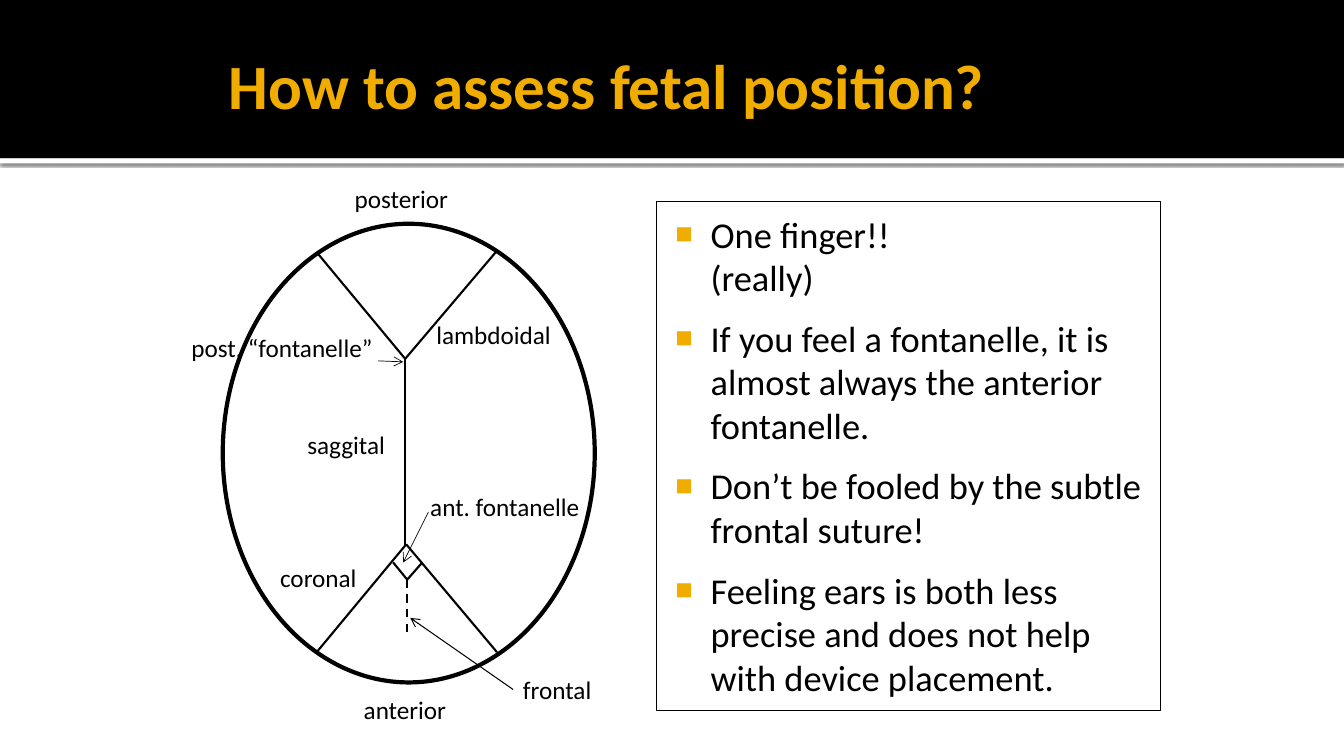
"""Build a slide on judging fetal position, with a skull diagram and advice."""
from dataclasses import dataclass

from lxml.etree import SubElement
from pptx import Presentation
from pptx.dml.color import RGBColor
from pptx.enum.dml import MSO_LINE
from pptx.enum.shapes import MSO_CONNECTOR, MSO_SHAPE
from pptx.enum.text import MSO_ANCHOR, MSO_AUTO_SIZE, PP_ALIGN
from pptx.oxml.ns import qn
from pptx.shapes.autoshape import Shape
from pptx.shapes.connector import Connector
from pptx.slide import Slide
from pptx.text.text import TextFrame, _Paragraph
from pptx.util import Emu, Inches, Pt

BLACK = RGBColor(0x00, 0x00, 0x00)
WHITE = RGBColor(0xFF, 0xFF, 0xFF)
GOLD = RGBColor(0xF0, 0xAD, 0x00)
FONT = "Calibri"
DASH = MSO_LINE.DASH
STRAIGHT = MSO_CONNECTOR.STRAIGHT
RECT, OVAL = MSO_SHAPE.RECTANGLE, MSO_SHAPE.OVAL
LEFT, TOP, MIDDLE = PP_ALIGN.LEFT, MSO_ANCHOR.TOP, MSO_ANCHOR.MIDDLE
FIXED, GROW = MSO_AUTO_SIZE.NONE, MSO_AUTO_SIZE.SHAPE_TO_FIT_TEXT
CELL = Inches(0.1)
COLS, ROWS = 133.33, 75
LEFT_SIDE = 1


@dataclass(frozen=True)
class Box:
    col: float
    row: float
    wide: float
    high: float


@dataclass(frozen=True)
class Label:
    text: str
    col: float
    row: float
    wide: float


@dataclass(frozen=True)
class Stroke:
    start: tuple[float, float]
    end: tuple[float, float]
    width: float = 1.5
    dashed: bool = False
    arrow: bool = False
    source: str = ""


HEADER = Box(0, 0, COLS, 15.7)
STRIP = Box(0, 15.7, COLS, 0.5)
TITLE = Box(21.7, 0, 81.7, 16.7)
ADVICE = Box(65.1, 20, 50, 50.5)
SKULL = Box(22.1, 22.2, 36.9, 45.5)
LABEL_HIGH = 4

POINTS = (
    ("One finger!! ", "(really)"),
    ("If you feel a fontanelle, it is almost always the anterior fontanelle.",),
    ("Don’t be fooled by the subtle frontal suture!",),
    ("Feeling ears is both less precise and does not help with device placement.",),
)
LABELS = (
    Label("lambdoidal", 42.3, 31.2, 13.7),
    Label("saggital", 29.5, 42.1, 10.2),
    Label("posterior", 34.2, 17.7, 11.8),
    Label("anterior", 35.1, 68.4, 10.6),
    Label("coronal", 26.8, 55.3, 9.8),
    Label("frontal", 50.9, 66.4, 9),
    Label("post. “fontanelle”", 18, 32.5, 20.3),
    Label("ant. fontanelle", 41.7, 48.3, 17.3),
)
POST, ANT, TIP = (40.2, 35.6), (40.3, 54), (40.4, 57.5)
STROKES = (
    Stroke((31.4, 25), POST),
    Stroke((49.2, 25), POST),
    Stroke((31.5, 64.6), ANT),
    Stroke((49.3, 64.7), ANT),
    Stroke(POST, (40.2, 54.1)),
    Stroke((39, 55.8), TIP),
    Stroke((41.9, 55.8), TIP),
    Stroke(TIP, (40.4, 63.3), dashed=True),
    Stroke((50.9, 68.4), (40.7, 61.3), 0.75, arrow=True, source="frontal"),
    Stroke((37.5, 35.8), (40, 35.9), 0.5, arrow=True),
    Stroke((42.5, 50.8), (40, 55.8), 0.5, arrow=True),
)


def span(cells: float) -> Emu:
    """Turn a count of grid cells into a length."""
    return Emu(round(cells * CELL))


def place(shape: Shape, box: Box) -> None:
    """Move a shape to its box on the grid."""
    shape.left, shape.top = span(box.col), span(box.row)
    shape.width, shape.height = span(box.wide), span(box.high)


def write(para: _Paragraph, text: str, size: float,
          color: RGBColor = BLACK, bold: bool = False) -> None:
    """Add one formatted run."""
    run = para.add_run()
    run.text = text
    run.font.name, run.font.size, run.font.bold = FONT, Pt(size), bold
    run.font.color.rgb = color


def inset(frame: TextFrame, left: float, top: float, right: float) -> None:
    """Set the margins of a frame, in grid cells."""
    frame.margin_left, frame.margin_top = span(left), span(top)
    frame.margin_right, frame.margin_bottom = span(right), span(0.5)


def draw_band(slide: Slide, box: Box, color: RGBColor) -> Shape:
    """Draw a full-width band behind all other shapes."""
    band = slide.shapes.add_shape(RECT, 0, 0, 0, 0)
    place(band, box)
    band.fill.solid()
    band.fill.fore_color.rgb = color
    band.line.fill.background()
    band.shadow.inherit = False
    slide.shapes.element.insert(2, band.element)
    return band


def add_shade(band: Shape) -> None:
    """Cast a soft shadow below a band."""
    effects = band.element.spPr.find(qn("a:effectLst"))
    shade = SubElement(effects, qn("a:outerShdw"), blurRad=str(Pt(2.5)),
                       dist=str(Pt(0.8)), dir="5400000", rotWithShape="0")
    color = SubElement(shade, qn("a:srgbClr"), val=str(BLACK))
    SubElement(color, qn("a:alpha"), val="60000")


def add_bullet(para: _Paragraph) -> None:
    """Give a paragraph a gold square bullet with a hanging indent."""
    props = para._p.get_or_add_pPr()
    props.set("marL", str(span(4.8)))
    props.set("indent", str(span(-3.5)))
    color = SubElement(props, qn("a:buClr"))
    SubElement(color, qn("a:srgbClr"), val=str(GOLD))
    SubElement(props, qn("a:buSzPct"), val="80000")
    SubElement(props, qn("a:buChar"), char="■")


def fill_title(title: Shape) -> None:
    """Place and write the title."""
    place(title, TITLE)
    frame = title.text_frame
    frame.auto_size, frame.vertical_anchor = FIXED, MIDDLE
    inset(frame, 1, 0.5, 0.5)
    para = frame.paragraphs[0]
    para.alignment = LEFT
    write(para, "How to assess fetal position?", 45, GOLD, True)


def fill_advice(body: Shape) -> None:
    """Place and write the framed bullet list."""
    place(body, ADVICE)
    body.line.color.rgb, body.line.width = BLACK, Pt(0.75)
    frame = body.text_frame
    frame.auto_size, frame.vertical_anchor = FIXED, TOP
    inset(frame, 0.6, 1, 1)
    for index, lines in enumerate(POINTS):
        para = frame.add_paragraph() if index else frame.paragraphs[0]
        para.alignment = LEFT
        para.space_before, para.space_after = Pt(0), Pt(12)
        add_bullet(para)
        for number, line in enumerate(lines):
            if number:
                para.add_line_break()
            write(para, line, 26)


def draw_skull(slide: Slide) -> None:
    """Draw the outline of the skull."""
    skull = slide.shapes.add_shape(OVAL, 0, 0, 0, 0)
    place(skull, SKULL)
    skull.fill.background()
    skull.line.color.rgb, skull.line.width = BLACK, Pt(3)
    skull.shadow.inherit = False


def draw_label(slide: Slide, label: Label) -> Shape:
    """Write a label of the diagram."""
    box = slide.shapes.add_textbox(0, 0, 0, 0)
    frame = box.text_frame
    frame.word_wrap, frame.auto_size = False, GROW
    write(frame.paragraphs[0], label.text, 18)
    place(box, Box(label.col, label.row, label.wide, LABEL_HIGH))
    return box


def draw_stroke(slide: Slide, stroke: Stroke) -> Connector:
    """Draw a suture line or a pointer."""
    ends = [span(cells) for cells in (*stroke.start, *stroke.end)]
    link = slide.shapes.add_connector(STRAIGHT, *ends)
    link.line.color.rgb, link.line.width = BLACK, Pt(stroke.width)
    if stroke.dashed:
        link.line.dash_style = DASH
    props = link.element.spPr
    if stroke.arrow:
        SubElement(props.find(qn("a:ln")), qn("a:tailEnd"), type="arrow")
    SubElement(props, qn("a:effectLst"))
    return link


def main() -> None:
    """Build and save the slide."""
    deck = Presentation()
    deck.slide_width, deck.slide_height = span(COLS), span(ROWS)
    slide = deck.slides.add_slide(deck.slide_layouts[1])
    draw_band(slide, HEADER, BLACK)
    add_shade(draw_band(slide, STRIP, WHITE))
    fill_title(slide.shapes.title)
    fill_advice(slide.placeholders[1])
    draw_skull(slide)
    boxes = {label.text: draw_label(slide, label) for label in LABELS}
    for stroke in STROKES:
        link = draw_stroke(slide, stroke)
        if stroke.source:
            link.begin_connect(boxes[stroke.source], LEFT_SIDE)
    deck.save("out.pptx")


if __name__ == "__main__":
    main()
